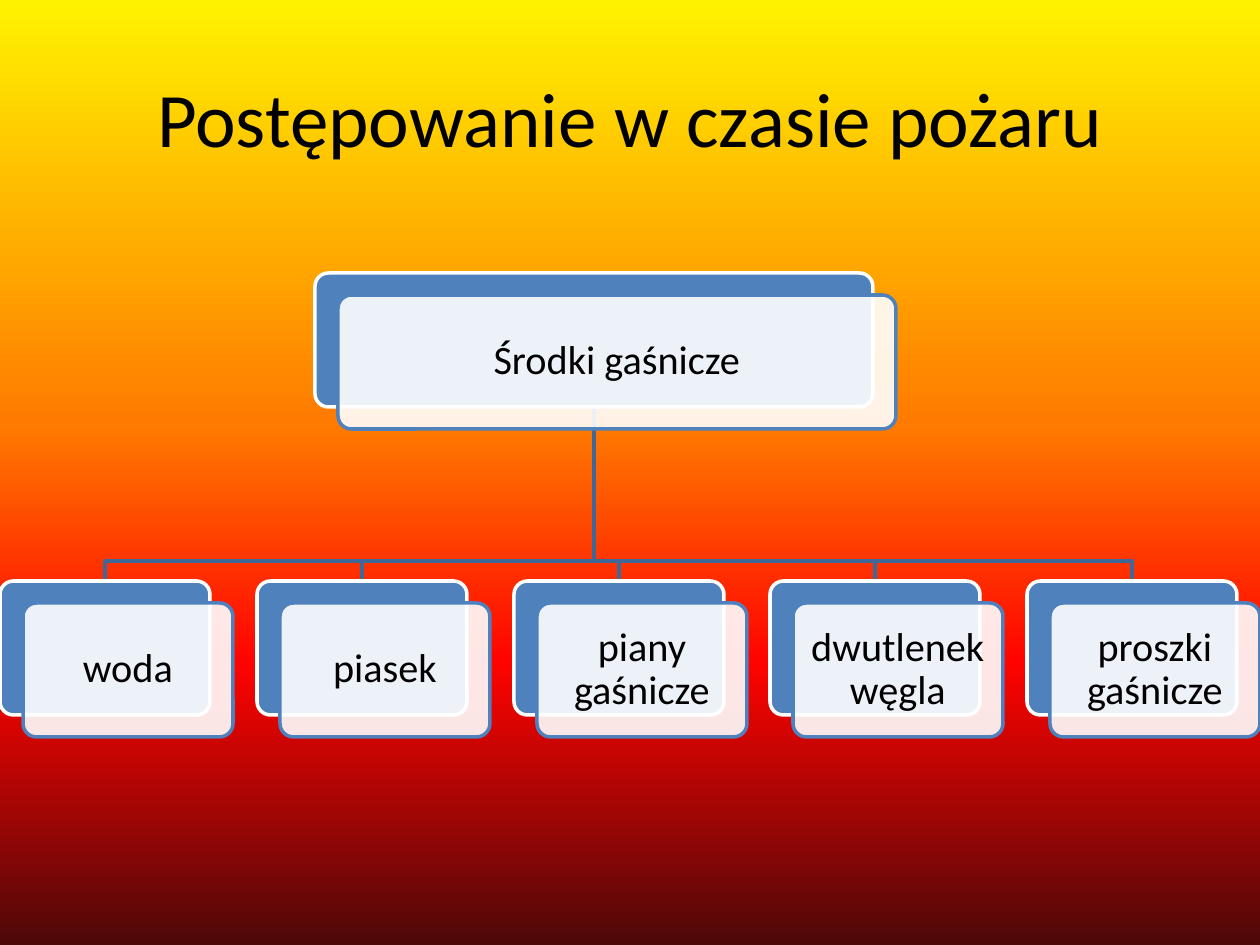
from lxml.etree import SubElement as Sub
from pptx import Presentation
from pptx.dml.color import RGBColor as RGB
from pptx.enum.shapes import MSO_SHAPE as Shape
from pptx.enum.text import MSO_ANCHOR as Anchor, PP_ALIGN as Align
from pptx.oxml.ns import qn
from pptx.util import Inches, Pt

PX = Inches(1) // 126
HUES = {"back": "4F81BD", "front": "FFFFFF", "wire": "3F6797", "text": "000000"}
SKY = [(0, "FFF200"), (45, "FF7A00"), (70, "FF0300"), (100, "4D0808")]


class Board:
    font = "Calibri"
    line = Pt(2)
    shift = (23, 22)  # front plate against back plate
    inset = 4  # label inside front plate
    margin = 12

    def __init__(self, slide):
        self.slide = slide

    def sky(self, stops):
        fill = self.slide.background.fill
        fill.gradient()
        fill.gradient_angle = 270
        ramp = next(self.slide.element.iter(qn("a:gsLst")))
        for old in list(ramp):
            ramp.remove(old)
        for pos, hue in stops:
            stop = Sub(ramp, qn("a:gs"), pos=str(pos * 1000))
            Sub(stop, qn("a:srgbClr"), val=hue)

    def label(self, frame, text, size):
        frame.word_wrap = True
        frame.vertical_anchor = Anchor.MIDDLE
        para = frame.paragraphs[0]
        para.alignment = Align.CENTER
        run = para.add_run()
        run.text = text
        run.font.name = self.font
        run.font.size = Pt(size)
        run.font.color.rgb = RGB.from_string(HUES["text"])
        return para

    def place(self, shape, x, y, w, h):
        shape.left, shape.top = x * PX, y * PX
        shape.width, shape.height = w * PX, h * PX

    def title(self, text, x, y, w, h):
        head = self.slide.shapes.title
        self.place(head, x, y, w, h)
        self.label(head.text_frame, text, 44)

    def edge(self, shape, hue):
        shape.shadow.inherit = False
        shape.line.color.rgb = RGB.from_string(HUES[hue])
        shape.line.width = self.line

    def plate(self, x, y, w, h, fill, edge, alpha=100):
        box = self.slide.shapes.add_shape(
            Shape.ROUNDED_RECTANGLE, x * PX, y * PX, w * PX, h * PX)
        box.adjustments[0] = 0.1
        box.fill.solid()
        box.fill.fore_color.rgb = RGB.from_string(HUES[fill])
        if alpha < 100:
            hue = next(box.element.spPr.iter(qn("a:srgbClr")))
            Sub(hue, qn("a:alpha"), val=str(alpha * 1000))
        self.edge(box, edge)

    def card(self, text, x, y, w, h):
        self.plate(x, y, w, h, "back", "front")
        x, y = x + self.shift[0], y + self.shift[1]
        self.plate(x, y, w, h, "front", "back", 90)
        gap = self.inset
        box = self.slide.shapes.add_textbox(0, 0, 0, 0)
        self.place(box, x + gap, y + gap, w - 2 * gap, h - 2 * gap)
        frame = box.text_frame
        frame.margin_left = frame.margin_right = self.margin * PX
        frame.margin_top = frame.margin_bottom = self.margin * PX
        para = self.label(frame, text, 23)
        para.line_spacing = 0.9
        para.space_after = Pt(8)

    def wire(self, x1, y1, x2, y2, bend):
        pen = self.slide.shapes.build_freeform(x1, y1, scale=PX)
        pen.add_line_segments([(x1, bend), (x2, bend), (x2, y2)], close=False)
        shape = pen.convert_to_shape()
        shape.fill.background()
        self.edge(shape, "wire")


def main():
    deck = Presentation()
    deck.slide_width, deck.slide_height = 1260 * PX, 945 * PX
    board = Board(deck.slides.add_slide(deck.slide_layouts[5]))
    board.sky(SKY)
    board.title("Postępowanie w czasie pożaru", 63, 38, 1134, 157)

    # Tree measures
    left, top, wide, high = 315, 273, 558, 134
    row, leaf = 581, 210
    names = ["woda", "piasek", "piany gaśnicze", "dwutlenek węgla",
             "proszki gaśnicze"]
    last = 1260 - board.shift[0] - leaf
    step = last / (len(names) - 1)
    spots = [round(i * step) for i in range(len(names))]

    # Branches, behind the cards
    for x in reversed(spots):
        board.wire(left + wide // 2, top + high, x + leaf // 2, row, row - 20)

    # Root and leaves
    board.card("Środki gaśnicze", left, top, wide, high)
    for name, x in zip(names, spots):
        board.card(name, x, row, leaf, high)

    deck.save("out.pptx")


if __name__ == "__main__":
    main()
